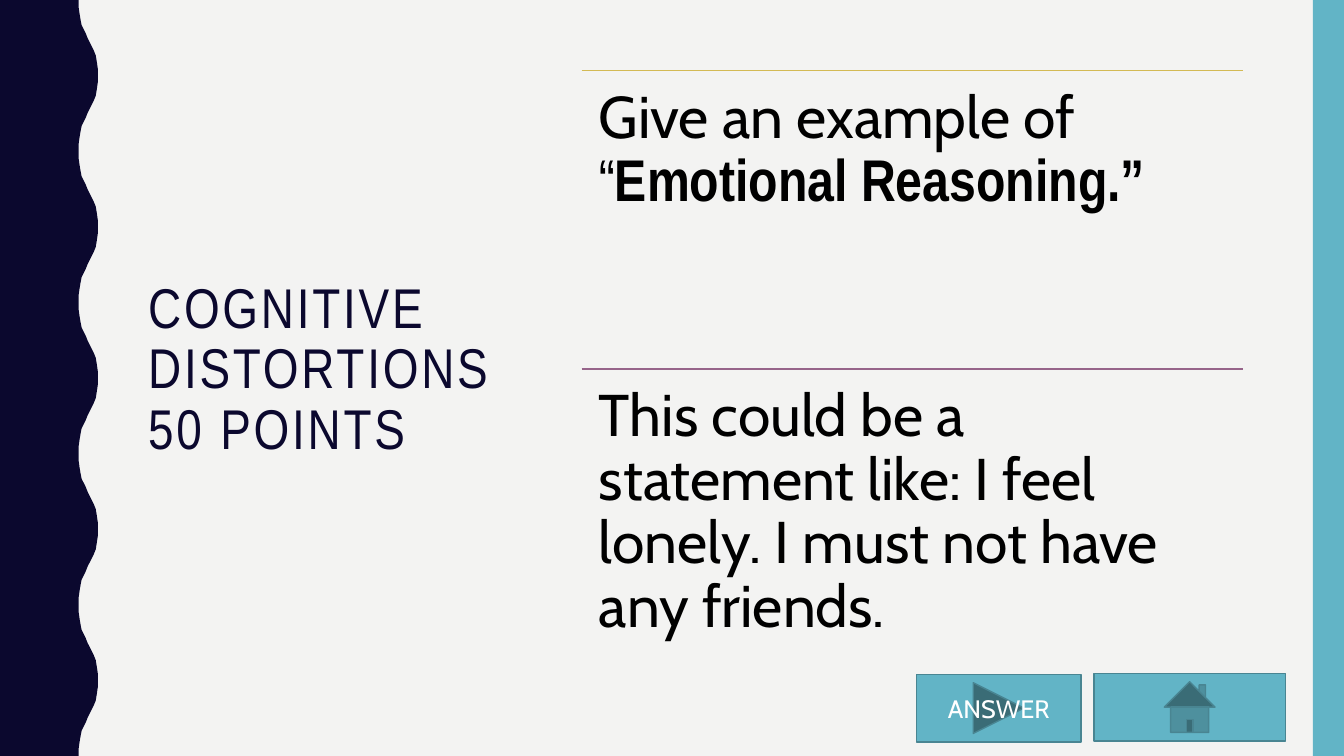
from pptx import Presentation
from pptx.dml.color import RGBColor
from pptx.enum.shapes import MSO_CONNECTOR, MSO_SHAPE
from pptx.enum.text import MSO_ANCHOR, MSO_AUTO_SIZE, PP_ALIGN
from pptx.oxml.ns import qn
from pptx.util import Inches, Pt
from lxml.etree import SubElement

# Content
HEADING = "COGNITIVE DISTORTIONS\v50 POINTS"
CARDS = [
    ("gold", [("Give an example of ", "Cabin", False),
              ("“", "Arial Narrow", False),
              ("Emotional Reasoning.”", "Arial Narrow", True)]),
    ("plum", [("This could be a statement like: I feel lonely. "
               "I must not have any friends.", "Cabin", False)]),
]
BUTTONS = [
    (MSO_SHAPE.ACTION_BUTTON_HOME, (10.85, 6.68, 1.9, 0.67), ""),
    (MSO_SHAPE.ACTION_BUTTON_FORWARD_NEXT if hasattr(MSO_SHAPE, "ACTION_BUTTON_FORWARD_NEXT")
     else MSO_SHAPE.ACTION_BUTTON_FORWARD_OR_NEXT, (9.09, 6.69, 1.63, 0.67), "ANSWER"),
]
COLORS = {"paper": "F3F3F2", "navy": "0B082E", "teal": "62B4C6", "edge": "498592",
          "gold": "D3BA55", "plum": "96648A", "black": "000000", "white": "FFFFFF"}

# Layout
WIDTH, HEIGHT = 13.33, 7.5
CARD_LEFT, CARD_TOP, CARD_WIDTH, CARD_HEIGHT = 5.77, 0.7, 6.56, 2.96
CARD_INSET = 0.17
WAVE_COUNT, WAVE_PERIOD = 5, 1.5
HALF_WAVE = [(0.78, 0), (0.78, 0.07), (0.79, 0.14), (0.8, 0.2), (0.81, 0.25),
             (0.83, 0.29), (0.85, 0.33), (0.87, 0.38), (0.89, 0.42), (0.91, 0.46),
             (0.93, 0.5), (0.95, 0.55), (0.96, 0.61), (0.97, 0.68), (0.97, 0.75)]


def color(name):
    return RGBColor.from_string(COLORS[name])


def inches(*lengths):
    return [Inches(length) for length in lengths]


def add_text(paragraph, text, font="Cabin", size=42, ink="black", bold=False, spacing=None):
    run = paragraph.add_run()
    run.text = text
    run.font.name, run.font.size, run.font.bold = font, Pt(size), bold
    run.font.color.rgb = color(ink)
    if spacing:
        run.font._element.set("spc", str(spacing * 100))


def paint(shape, fill, line=None):
    shape.shadow.inherit = False
    shape.fill.solid()
    shape.fill.fore_color.rgb = color(fill)
    if line:
        shape.line.color.rgb = color(line)
        shape.line.width = Pt(1)
    else:
        shape.line.fill.background()


prs = Presentation()
prs.slide_width, prs.slide_height = inches(WIDTH, HEIGHT)
slide = prs.slides.add_slide(prs.slide_layouts[5])
shapes = slide.shapes
slide.background.fill.solid()
slide.background.fill.fore_color.rgb = color("paper")

# Wavy left edge: each half wave is followed by its mirror
one_wave = HALF_WAVE + [(x, WAVE_PERIOD - y) for x, y in reversed(HALF_WAVE[:-1])]
wave_edge = [(x, y + i * WAVE_PERIOD) for i in range(WAVE_COUNT) for x, y in one_wave]
outline = shapes.build_freeform(0, 0)
outline.add_line_segments([inches(x, y) for x, y in wave_edge + [(0, HEIGHT)]])
paint(outline.convert_to_shape(), "navy")

# Right band
paint(shapes.add_shape(MSO_SHAPE.RECTANGLE, *inches(13.02, 0, 0.31, HEIGHT)), "teal")

# Title
title = shapes.title
title.left, title.top, title.width, title.height = inches(1.37, 0.71, 3.7, 5.93)
title.text_frame.auto_size = MSO_AUTO_SIZE.NONE
title.text_frame.vertical_anchor = MSO_ANCHOR.MIDDLE
heading = title.text_frame.paragraphs[0]
heading.alignment, heading.line_spacing = PP_ALIGN.LEFT, 0.9
for i, part in enumerate(HEADING.split("\v")):
    if i:
        heading.add_line_break()
    add_text(heading, part, font="Arial Narrow", size=40, ink="navy", spacing=2)

# Question and answer, each under a rule
for i, (rule_color, runs) in enumerate(CARDS):
    top = CARD_TOP + i * CARD_HEIGHT
    rule = shapes.add_connector(MSO_CONNECTOR.STRAIGHT,
                                *inches(CARD_LEFT, top, CARD_LEFT + CARD_WIDTH, top))
    rule.line.color.rgb = color(rule_color)
    rule.line.width = Pt(1)
    SubElement(rule._element.spPr, qn("a:effectLst"))

    card = shapes.add_textbox(*inches(CARD_LEFT, top, CARD_WIDTH, CARD_HEIGHT)).text_frame
    card.word_wrap = True
    card.margin_left = card.margin_right = Inches(CARD_INSET)
    card.margin_top = card.margin_bottom = Inches(CARD_INSET)
    card.paragraphs[0].line_spacing = 0.9
    for text, font, bold in runs:
        add_text(card.paragraphs[0], text, font=font, bold=bold)

# Navigation buttons
for preset, box, label in BUTTONS:
    button = shapes.add_shape(preset, *inches(*box))
    paint(button, "teal", line="edge")
    if label:
        button.text_frame.vertical_anchor = MSO_ANCHOR.MIDDLE
        button.text_frame.paragraphs[0].alignment = PP_ALIGN.CENTER
        add_text(button.text_frame.paragraphs[0], label, size=18, ink="white")

prs.save("out.pptx")
